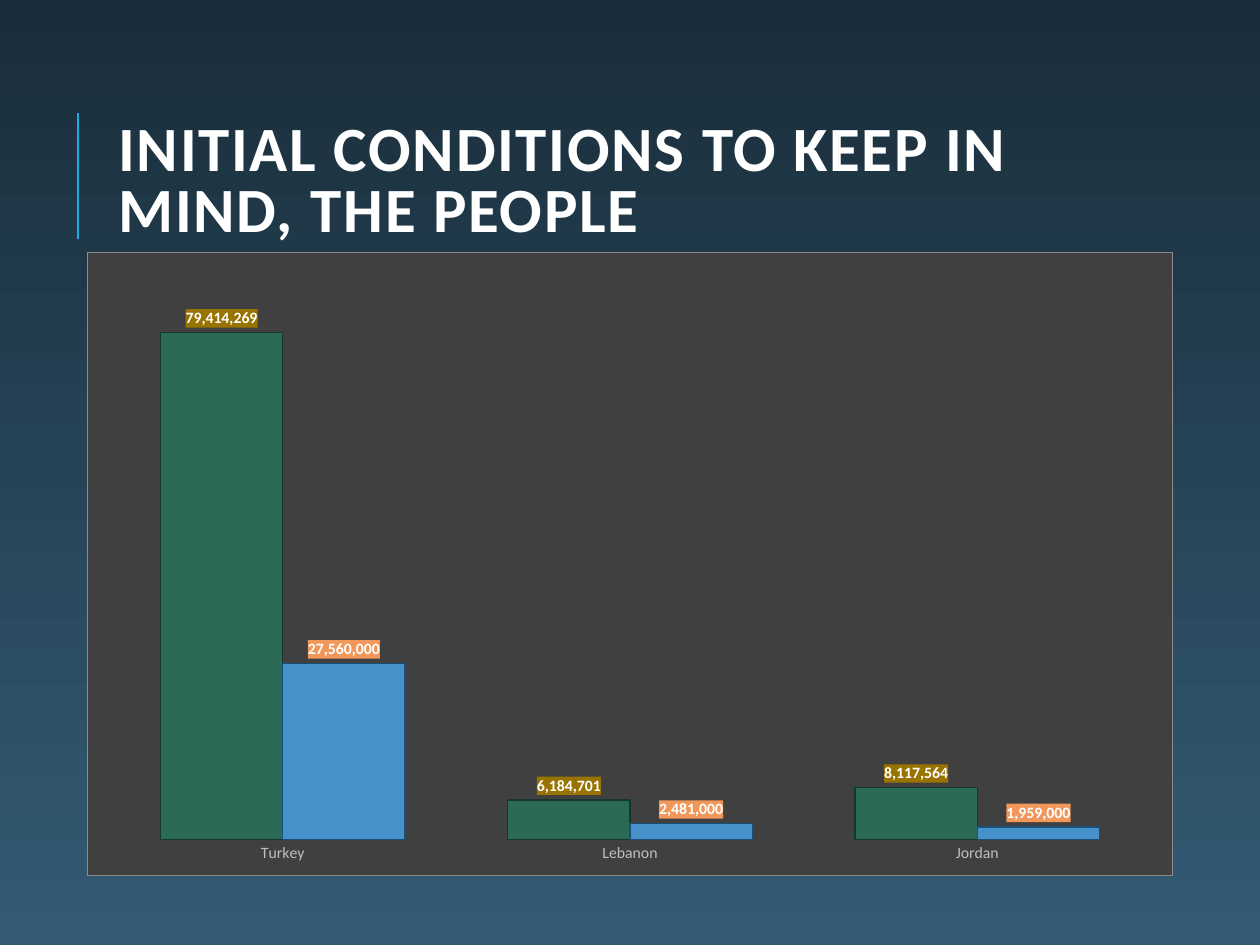
import pptx
import pptx.chart.data
import pptx.dml.color
import pptx.enum.chart
import pptx.enum.shapes
import pptx.enum.text
import pptx.oxml
import pptx.oxml.ns
import pptx.util
from pptx.util import Inches, Pt

FONT = "Calibri"


def color(hex_string):
    return pptx.dml.color.RGBColor.from_string(hex_string)


def add_area_format(parent, fill, border=""):
    """Put a solid fill and a border on a chart part, ahead of its text format."""
    line = f'<a:solidFill><a:srgbClr val="{border}"/></a:solidFill>' if border else "<a:noFill/>"
    properties = pptx.oxml.parse_xml(
        f'<c:spPr {pptx.oxml.ns.nsdecls("c", "a")}>'
        f'<a:solidFill><a:srgbClr val="{fill}"/></a:solidFill>'
        f'<a:ln w="{Pt(0.5)}">{line}</a:ln></c:spPr>')
    parent.find(pptx.oxml.ns.qn("c:txPr")).addprevious(properties)


presentation = pptx.Presentation()
presentation.slide_width, presentation.slide_height = Inches(10), Inches(7.5)
slide = presentation.slides.add_slide(presentation.slide_layouts[5])

# Background gradient, dark at the top
background = slide.background.fill
background.gradient()
background.gradient_angle = 270
for stop, shade, position in zip(background.gradient_stops, ("1A2D3A", "335B74"), (0, 1)):
    stop.color.rgb = color(shade)
    stop.position = position

# Accent line beside the title
accent = slide.shapes.add_connector(
    pptx.enum.shapes.MSO_CONNECTOR.STRAIGHT,
    Inches(0.62), Inches(1.9), Inches(0.62), Inches(0.9))
accent.line.color.rgb = color("1CADE4")
accent.line.width = Pt(1.5)
accent._element.spPr.append(
    pptx.oxml.parse_xml(f'<a:effectLst {pptx.oxml.ns.nsdecls("a")}/>'))

# Title
title = slide.shapes.title
title.left, title.top = Inches(0.84), Inches(0.64)
title.width, title.height = Inches(7.97), Inches(1.64)
title.text_frame.word_wrap = True
title.text_frame.vertical_anchor = pptx.enum.text.MSO_ANCHOR.MIDDLE
paragraph = title.text_frame.paragraphs[0]
paragraph.alignment = pptx.enum.text.PP_ALIGN.LEFT
paragraph.line_spacing = 0.8
run = paragraph.add_run()
run.text = "INITIAL CONDITIONS TO KEEP IN MIND, THE PEOPLE"
run.font.name = FONT
run.font.size = Pt(36)
run.font.bold = True
run.font.color.rgb = color("FFFFFF")
run.font._element.set("spc", "100")

# Chart data
chart_data = pptx.chart.data.CategoryChartData(number_format="#,##0")
chart_data.categories = ["Turkey", "Lebanon", "Jordan"]
chart_data.add_series("Series 1", (79414269, 6184701, 8117564))
chart_data.add_series("Series 2", (27560000, 2481000, 1959000))
chart = slide.shapes.add_chart(
    pptx.enum.chart.XL_CHART_TYPE.COLUMN_CLUSTERED,
    Inches(0.69), Inches(2), Inches(8.62), Inches(4.95), chart_data).chart

# Chart area
chart.has_title = False
chart.has_legend = False
chart.font.name = FONT
chart.font.size = Pt(10)
chart.font.color.rgb = color("FFFFFF")
add_area_format(chart._chartSpace, "404040", "8C8C8C")

# Axes
category_axis = chart.category_axis
category_axis.major_tick_mark = pptx.enum.chart.XL_TICK_MARK.NONE
category_axis.format.line.fill.background()
category_axis.tick_labels.font.name = FONT
category_axis.tick_labels.font.size = Pt(9)
category_axis.tick_labels.font.color.rgb = color("BFBFBF")
value_axis = chart.value_axis
value_axis.has_major_gridlines = False
value_axis.minimum_scale = 0
value_axis.maximum_scale = 90000000
value_axis.visible = False

# Columns and their labels
plot = chart.plots[0]
plot.vary_by_categories = False
plot.gap_width = 84
plot.overlap = 0
styles = [("28705B", "14382D", "997300"), ("479DDC", "17517A", "F1975A")]
for series, (fill, outline, label_fill) in zip(plot.series, styles):
    series.format.fill.solid()
    series.format.fill.fore_color.rgb = color(fill)
    for shade in series._element.spPr.iter(pptx.oxml.ns.qn("a:srgbClr")):
        shade.append(pptx.oxml.parse_xml(
            f'<a:alpha {pptx.oxml.ns.nsdecls("a")} val="88000"/>'))
    series.format.line.color.rgb = color(outline)
    series.format.line.width = Pt(0.75)
    labels = series.data_labels
    labels.show_value = True
    labels.position = pptx.enum.chart.XL_LABEL_POSITION.OUTSIDE_END
    labels.number_format = "#,##0"
    labels.number_format_is_linked = False
    labels.font.name = FONT
    labels.font.size = Pt(9)
    labels.font.bold = True
    labels.font.color.rgb = color("FFFFFF")
    add_area_format(labels._element, label_fill)

presentation.save("out.pptx")
